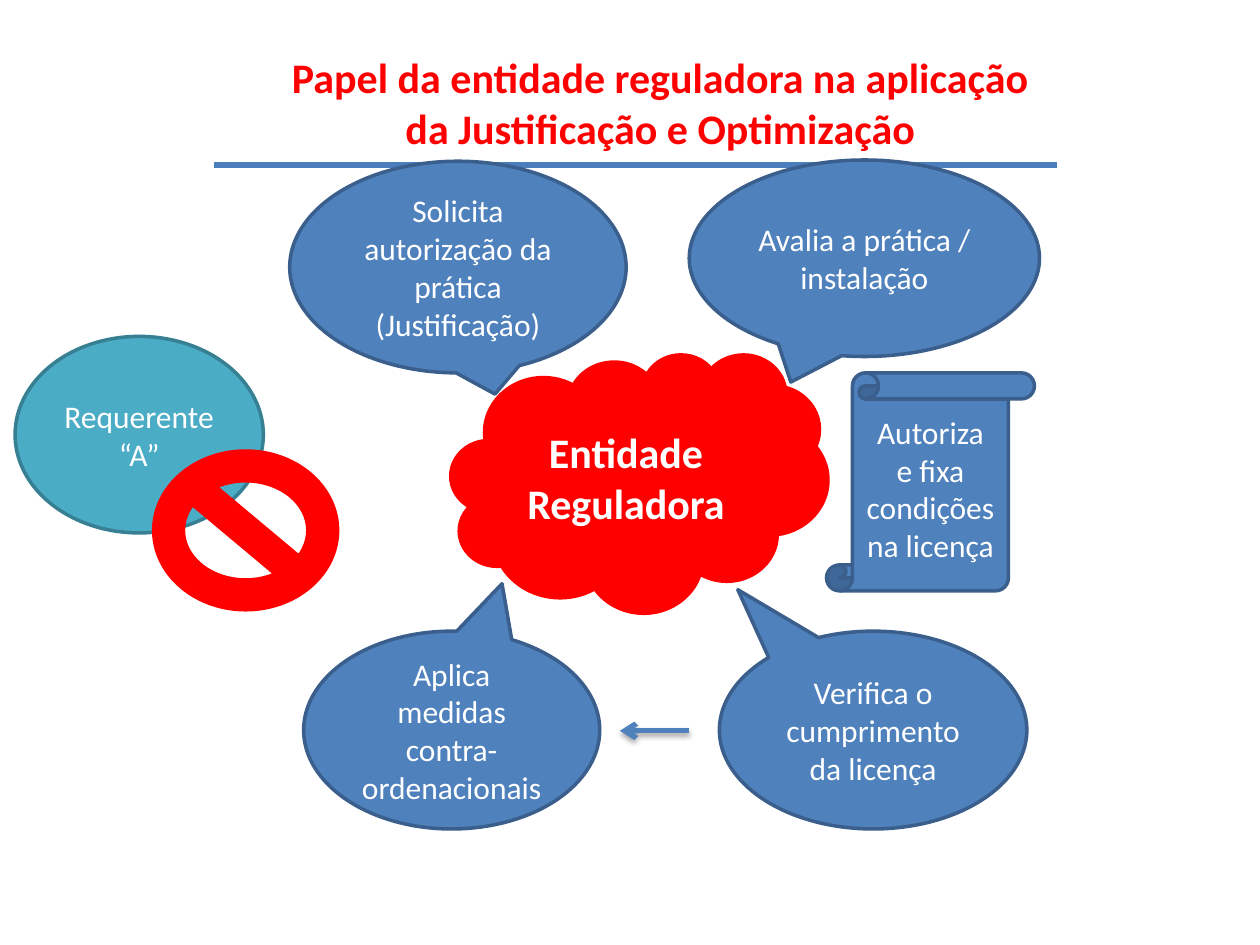
from dataclasses import dataclass

from lxml.etree import SubElement
from pptx import Presentation
from pptx.dml.color import RGBColor
from pptx.enum.shapes import MSO_CONNECTOR, MSO_SHAPE
from pptx.enum.text import MSO_ANCHOR, MSO_AUTO_SIZE, PP_ALIGN
from pptx.oxml.ns import qn
from pptx.util import Emu, Pt

EMU_PER_PX = 9144  # 100 px to the inch
COLORS = {
    "red": "FF0000", "white": "FFFFFF", "blue": "4F81BD", "navy": "3A5F8C",
    "teal": "4BACC6", "dark_teal": "377F92", "rule": "4B7EBC",
}
BODY_FONT = {"name": "Calibri", "size": Pt(18), "bold": False}
STRONG_FONT = {"name": "Calibri", "size": Pt(24), "bold": True}


@dataclass
class Figure:
    kind: MSO_SHAPE
    box: tuple[int, int, int, int]
    lines: tuple[str, ...] = ()
    fill: str = "blue"
    outline: str = "navy"
    font: dict | None = None
    pointer: tuple[float, float] | None = None


BALLOON = MSO_SHAPE.OVAL_CALLOUT
FIGURES = [
    Figure(MSO_SHAPE.CLOUD, (358, 281, 299, 205), ("Entidade Reguladora",),
           "red", "red", STRONG_FONT),
    Figure(BALLOON, (230, 128, 267, 168),
           ("Solicita autorização da prática", "(Justificação)"), pointer=(0.11, 0.6)),
    Figure(MSO_SHAPE.OVAL, (12, 267, 197, 156), ("Requerente “A”",), "teal", "dark_teal"),
    Figure(BALLOON, (547, 127, 278, 156), ("Avalia a prática / instalação",),
           pointer=(-0.21, 0.63)),
    Figure(MSO_SHAPE.VERTICAL_SCROLL, (656, 296, 165, 173),
           ("Autoriza\ve fixa condições na licença",)),
    Figure(BALLOON, (571, 501, 244, 157), ("Verifica o cumprimento da licença",),
           pointer=(-0.44, -0.71)),
    Figure(BALLOON, (241, 501, 235, 157), ("Aplica medidas contra-ordenacionais",),
           pointer=(0.17, -0.74)),
]
PROHIBITION = Figure(MSO_SHAPE.NO_SYMBOL, (122, 358, 146, 126), (), "red", "red")


def px(*lengths: int) -> list[Emu]:
    return [Emu(length * EMU_PER_PX) for length in lengths]


def rgb(name: str) -> RGBColor:
    return RGBColor.from_string(COLORS[name])


def write_lines(frame, lines: tuple[str, ...], font: dict, color: str) -> None:
    frame.word_wrap = True
    for index, line in enumerate(lines):
        para = frame.paragraphs[0] if index == 0 else frame.add_paragraph()
        para.text = line
        para.alignment = PP_ALIGN.CENTER
        for name, value in font.items():
            setattr(para.font, name, value)
        para.font.color.rgb = rgb(color)


def draw_figure(page, figure: Figure) -> None:
    shape = page.shapes.add_shape(figure.kind, *px(*figure.box))
    shape.shadow.inherit = False
    shape.fill.solid()
    shape.fill.fore_color.rgb = rgb(figure.fill)
    shape.line.color.rgb = rgb(figure.outline)
    shape.line.width = Pt(2)
    if figure.pointer:
        shape.adjustments[0], shape.adjustments[1] = figure.pointer
    shape.text_frame.vertical_anchor = MSO_ANCHOR.MIDDLE
    write_lines(shape.text_frame, figure.lines, figure.font or BODY_FONT, "white")


def draw_line(page, ends: tuple[int, int, int, int], color: str, arrow: bool = False) -> None:
    """Draw a straight line; an arrow also gets a head and a soft shadow below it."""
    line = page.shapes.add_connector(MSO_CONNECTOR.STRAIGHT, *px(*ends))
    line.line.color.rgb = rgb(color)
    line.line.width = Pt(3)
    properties = line._element.spPr
    if arrow:
        SubElement(properties.find(qn("a:ln")), qn("a:tailEnd"), type="arrow")
    effects = SubElement(properties, qn("a:effectLst"))
    if arrow:
        shadow = SubElement(effects, qn("a:outerShdw"), blurRad=str(Pt(3.1)),
                            dist=str(Pt(1.8)), dir="5400000", rotWithShape="0")
        tint = SubElement(shadow, qn("a:srgbClr"), val="000000")
        SubElement(tint, qn("a:alpha"), val="35000")


def write_title(page, text: str) -> None:
    title = page.shapes.title
    title.left, title.top, title.width, title.height = px(217, 36, 614, 91)
    title.text_frame.auto_size = MSO_AUTO_SIZE.NONE
    title.text_frame.vertical_anchor = MSO_ANCHOR.TOP
    write_lines(title.text_frame, (text,), STRONG_FONT, "red")


def main() -> None:
    deck = Presentation()
    deck.slide_width, deck.slide_height = px(1000, 750)
    page = deck.slides.add_slide(deck.slide_layouts[5])
    draw_line(page, (170, 131, 839, 131), "rule")
    write_title(page, "Papel da entidade reguladora na aplicação da Justificação e Optimização")
    for figure in FIGURES:
        draw_figure(page, figure)
    draw_line(page, (547, 580, 492, 580), "blue", arrow=True)
    draw_figure(page, PROHIBITION)
    deck.save("out.pptx")


if __name__ == "__main__":
    main()
